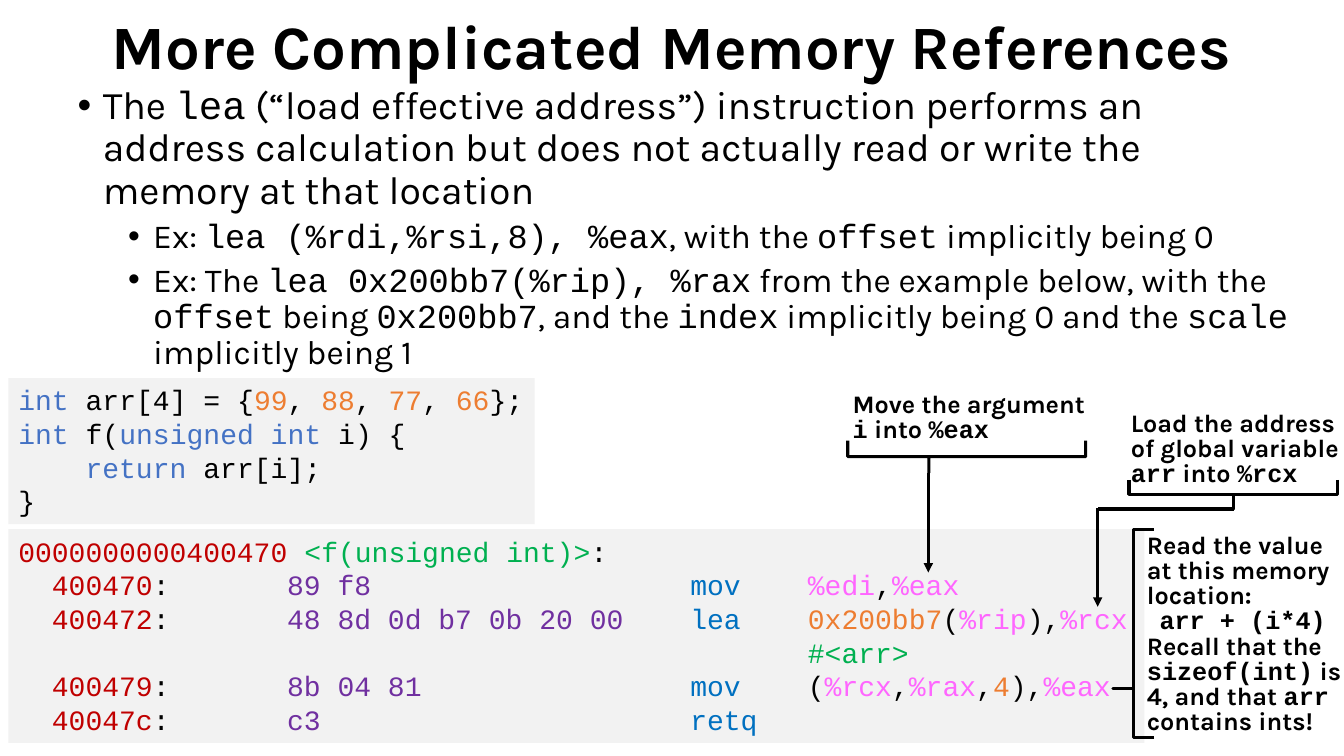
"""Build a slide that explains the lea instruction with C code, assembly and callouts."""
from lxml import etree
from pptx import Presentation
from pptx import util as u
from pptx.dml.color import RGBColor
from pptx.enum import shapes, text
from pptx.oxml.ns import qn

COLORS = {
    "ink": "000000", "panel": "F2F2F2", "keyword": "4472C4", "number": "ED7D31",
    "address": "C00000", "symbol": "00B050", "bytes": "7030A0", "op": "0070C0",
    "register": "FF66FF",
}
PROSE, MONO = "Karla", "Courier New"
CELL = u.Inches(1 / 12)
COLS, ROWS = 160, 90
CHAR = 2


def cells(*counts):
    return [round(n * CELL) for n in counts]


def write(tf, lines, size, bold=False, stops=()):
    """Fill a frame; a line is prose with `code` spans or a list of (role, code) pairs."""
    tf.word_wrap = True
    tf.auto_size = text.MSO_AUTO_SIZE.NONE
    for i, line in enumerate(lines):
        p = tf.paragraphs[0] if i == 0 else tf.add_paragraph()
        if isinstance(line, str):
            runs = [("ink", part, MONO if n % 2 else PROSE)
                    for n, part in enumerate(line.split("`")) if part]
        else:
            runs = [(role, part, MONO) for role, part in line]
            p.alignment = text.PP_ALIGN.LEFT
        for role, part, font in runs:
            r = p.add_run()
            r.text = part
            r.font.name, r.font.size, r.font.bold = font, u.Pt(size), bold
            r.font.color.rgb = RGBColor.from_string(COLORS[role])
        if i < len(stops) and stops[i]:
            tabs = etree.SubElement(p._p.get_or_add_pPr(), qn("a:tabLst"))
            for stop in cells(*stops[i]):
                etree.SubElement(tabs, qn("a:tab"), pos=str(stop), algn="l")


prs = Presentation()
prs.slide_width, prs.slide_height = cells(COLS, ROWS)
s = prs.slides.add_slide(prs.slide_layouts[1])

title, body = s.placeholders
title.left, title.top, title.width, title.height = cells(11, 0.12, 138, 11.52)
write(title.text_frame, ["More Complicated Memory References"], 44, bold=True)
title.text_frame.paragraphs[0].line_spacing = 0.9

body.left, body.top, body.width, body.height = cells(8.04, 9.6, 147.36, 35.4)
write(body.text_frame, [
    "The `lea` (“load effective address”) instruction performs an address calculation "
    "but does not actually read or write the memory at that location",
    "Ex: `lea (%rdi,%rsi,8), %eax`, with the `offset` implicitly being 0",
    "Ex: The `lea 0x200bb7(%rip), %rax` from the example below, with the `offset` being "
    "`0x200bb7`, and the `index` implicitly being 0 and the `scale` implicitly being 1",
], 28)
for p, level in zip(body.text_frame.paragraphs, (0, 1, 1)):
    p.level = level
    p.line_spacing = 0.9
    p.space_before = u.Pt(5 if level else 10)
    pPr = p._p.get_or_add_pPr()
    pPr.set("marL", str(cells(3 + 6 * level)[0]))
    pPr.set("indent", str(cells(-3)[0]))
    etree.SubElement(pPr, qn("a:buFont"), typeface="Arial")
    etree.SubElement(pPr, qn("a:buChar"), char="•")
    for r in p.runs:
        r.font.size = u.Pt(24 if level else 28)

values = [("number", "99"), ("ink", ", "), ("number", "88"), ("ink", ", "),
          ("number", "77"), ("ink", ", "), ("number", "66")]
source = [
    [("keyword", "int "), ("ink", "arr[4] = {"), *values, ("ink", "};")],
    [("keyword", "int"), ("ink", " f("), ("keyword", "unsigned int "), ("ink", "i) {")],
    [("keyword", "\treturn "), ("ink", "arr[i];")],
    [("ink", "}")],
]
source_stops = [(), (), (4 * CHAR,), ()]

instructions = [
    ("400470", "89 f8", "mov",
     [("register", "%edi"), ("ink", ","), ("register", "%eax")]),
    ("400472", "48 8d 0d b7 0b 20 00", "lea",
     [("number", "0x200bb7"), ("ink", "("), ("register", "%rip"), ("ink", "),"),
      ("register", "%rcx")]),
    ("400479", "8b 04 81", "mov",
     [("ink", "("), ("register", "%rcx"), ("ink", ","), ("register", "%rax"),
      ("ink", ","), ("number", "4"), ("ink", "),"), ("register", "%eax")]),
    ("40047c", "c3", "retq", []),
]
fields = [CHAR * n for n in (2, 16, 40, 47)]
assembly = [[("address", "0000000000400470 "), ("symbol", "<f(unsigned int)>"), ("ink", ":")]]
for address, code, op, operands in instructions:
    gap = [("ink", "\t")] if operands else []
    assembly.append([("address", "\t" + address), ("ink", ":"), ("bytes", "\t" + code),
                     ("op", "\t" + op), *gap, *operands])
assembly.insert(3, [("symbol", "\t#<arr>")])
assembly_stops = [(), fields, fields, fields[-1:], fields, fields]

for place, lines, stops in [
    ((1, 45, 62.64, 17.4), source, source_stops),
    ((1, 63, 135.24, 25.44), assembly, assembly_stops),
]:
    sp = s.shapes.add_shape(shapes.MSO_SHAPE.RECTANGLE, *cells(*place))
    sp.shadow.inherit = False
    sp.fill.solid()
    sp.fill.fore_color.rgb = RGBColor.from_string(COLORS["panel"])
    sp.line.fill.background()
    sp.text_frame.vertical_anchor = text.MSO_ANCHOR.TOP
    write(sp.text_frame, lines, 20, stops=stops)

callouts = [
    ((135.36, 63, 25.68, 25.44),
     ["Read the value at this memory location:", "`\tarr + (i*4)`", "Recall that the",
      "`sizeof(int)` is 4, and that `arr` contains ints!"],
     (132.48, 63, 4.92, 24.84), 180, 0.238),
    ((100.32, 46.2, 32.16, 7.32), ["Move the argument `i` into `%eax`"],
     (113.16, 40.2, 3.84, 28.32), 90, 0.659),
    ((133.44, 48.48, 27.24, 10.32),
     ["Load the address of global variable `arr` into `%rcx`"],
     (145.08, 46.44, 3.48, 24.84), 90, 0.5),
]
for place, lines, brace_place, turn, tip in callouts:
    note = s.shapes.add_textbox(*cells(*place))
    write(note.text_frame, lines, 18, bold=True, stops=[(), (1.5,)])
    for p in note.text_frame.paragraphs:
        p.line_spacing = u.Pt(18)
    brace = s.shapes.add_shape(shapes.MSO_SHAPE.RIGHT_BRACE, *cells(*brace_place))
    brace.shadow.inherit = False
    brace.rotation = turn
    brace.adjustments[0], brace.adjustments[1] = 0, tip
    brace.fill.background()
    brace.line.color.rgb = RGBColor.from_string(COLORS["ink"])
    brace.line.width = u.Pt(2.25)

for ends, arrow in [
    ((110.52, 56.28, 110.52, 68.16), True),
    ((130.68, 60.48, 130.68, 72.24), True),
    ((146.88, 60.6, 130.68, 60.6), False),
]:
    line = s.shapes.add_connector(shapes.MSO_CONNECTOR.STRAIGHT, *cells(*ends))
    line.line.color.rgb = RGBColor.from_string(COLORS["ink"])
    line.line.width = u.Pt(2.25)
    if arrow:
        etree.SubElement(line.line._get_or_add_ln(), qn("a:tailEnd"), type="triangle")
    etree.SubElement(line._element.spPr, qn("a:effectLst"))

prs.save("out.pptx")
